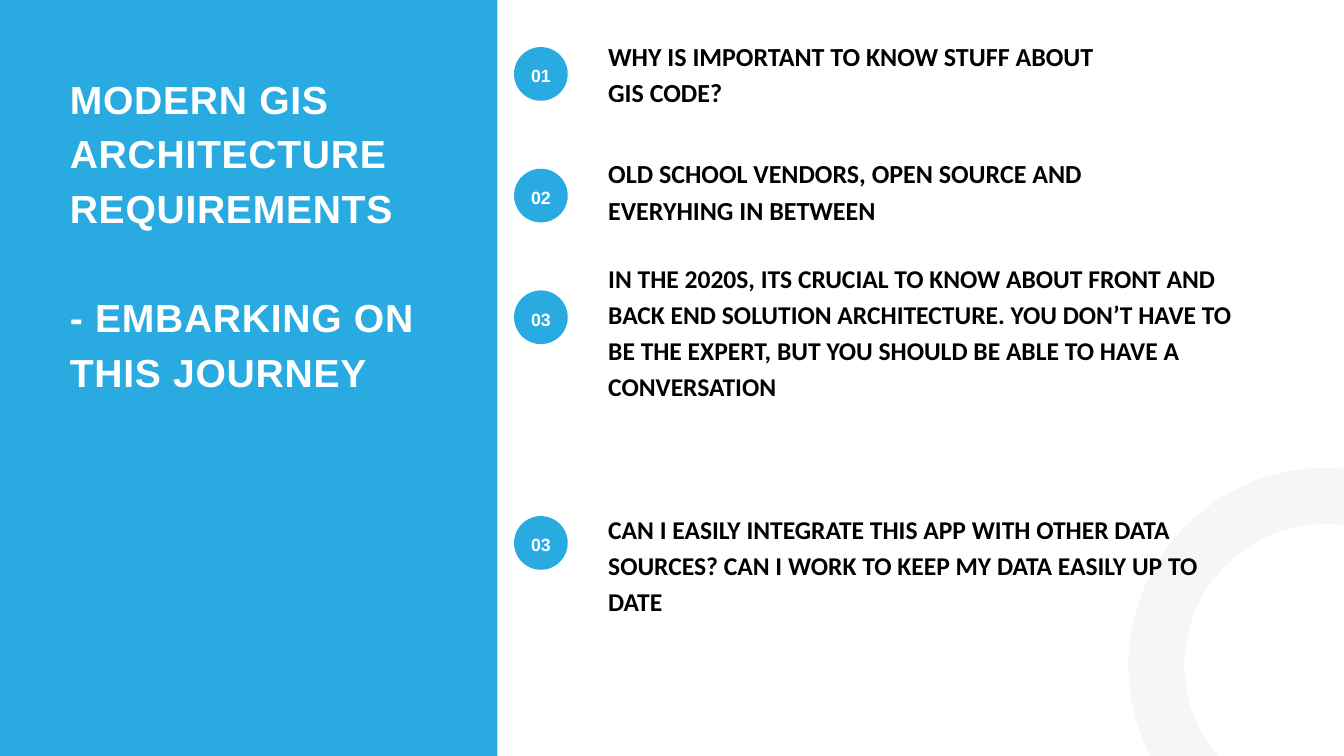
"""Build the slide on modern GIS architecture requirements."""
from pptx import Presentation
from pptx.dml.color import RGBColor
from pptx.enum.shapes import MSO_SHAPE
from pptx.enum.text import MSO_ANCHOR, PP_ALIGN
from pptx.util import Cm, Pt

RECT, OVAL = MSO_SHAPE.RECTANGLE, MSO_SHAPE.OVAL
MIDDLE, CENTER = MSO_ANCHOR.MIDDLE, PP_ALIGN.CENTER
BLUE, GREY, WHITE, BLACK = "29ABE2", "F6F6F6", "FFFFFF", "000000"


def add_shape(kind, x, y, w, h, fill=None):
    sp = s.shapes.add_shape(kind, Cm(x), Cm(y), Cm(w), Cm(h))
    sp.shadow.inherit = False
    sp.line.fill.background()
    if fill:
        sp.fill.solid()
        sp.fill.fore_color.rgb = RGBColor.from_string(fill)
    else:
        sp.fill.background()
    return sp


def set_text(sp, paragraphs, font, size, color, leading, gap=0):
    tf = sp.text_frame
    tf.word_wrap = True
    tf.margin_left = tf.margin_top = tf.margin_right = tf.margin_bottom = 0
    tf.text = "\n".join(paragraphs)
    for p in tf.paragraphs:
        p.line_spacing = Pt(leading)
        for r in p.runs:
            r.font.name = font
            r.font.size = Pt(size)
            r.font.bold = True
            r.font.color.rgb = RGBColor.from_string(color)
    if gap:
        tf.paragraphs[-1].space_before = Pt(gap)
    return tf


prs = Presentation()
prs.slide_width, prs.slide_height = Cm(50.8), Cm(28.58)
s = prs.slides.add_slide(prs.slide_layouts[6])

add_shape(RECT, 0, 0, 18.8, 28.58, BLUE)

ring = add_shape(OVAL, 43.71, 18.75, 12.78, 12.78)
ring.line.color.rgb = RGBColor.from_string(GREY)
ring.line.width = Pt(60)

title = s.shapes.add_textbox(Cm(2.64), Cm(2.54), Cm(13.51), Cm(12.32))
tf = set_text(title, ["MODERN GIS ARCHITECTURE", "REQUIREMENTS",
                      "- EMBARKING ON THIS JOURNEY"],
              "Arial", 41.9, WHITE, 58.6, gap=58.6)
for p in tf.paragraphs:
    for r in p.runs:
        r.font._element.set("spc", "80")

badges = [("01", 1.78), ("02", 6.38), ("03", 10.98), ("03", 19.51)]
for number, y in badges:
    sp = add_shape(OVAL, 19.43, y, 2.03, 2.03, BLUE)
    tf = set_text(sp, [number], "Arial", 19, WHITE, 26.6)
    tf.vertical_anchor = MIDDLE
    tf.paragraphs[0].alignment = CENTER

topics = [
    (1.32, 19.71, 2.9, 27.9, 39.1, 0,
     ["WHY IS IMPORTANT TO KNOW STUFF ABOUT GIS CODE?"]),
    (5.77, 21.41, 2.9, 27.9, 39, 0,
     ["OLD SCHOOL VENDORS, OPEN SOURCE AND EVERYHING IN BETWEEN"]),
    (9.75, 23.75, 13.64, 27.4, 38.4, 3 * 38.4,
     ["IN THE 2020S, ITS CRUCIAL TO KNOW ABOUT FRONT AND BACK END SOLUTION "
      "ARCHITECTURE. YOU DON’T HAVE TO BE THE EXPERT, BUT YOU SHOULD BE ABLE "
      "TO HAVE A CONVERSATION",
      "CAN I EASILY INTEGRATE THIS APP WITH OTHER DATA SOURCES? CAN I WORK TO "
      "KEEP MY DATA EASILY UP TO DATE"]),
]
for y, w, h, size, leading, gap, paragraphs in topics:
    sp = s.shapes.add_textbox(Cm(22.99), Cm(y), Cm(w), Cm(h))
    set_text(sp, paragraphs, "Calibri", size, BLACK, leading, gap)

prs.save("out.pptx")
